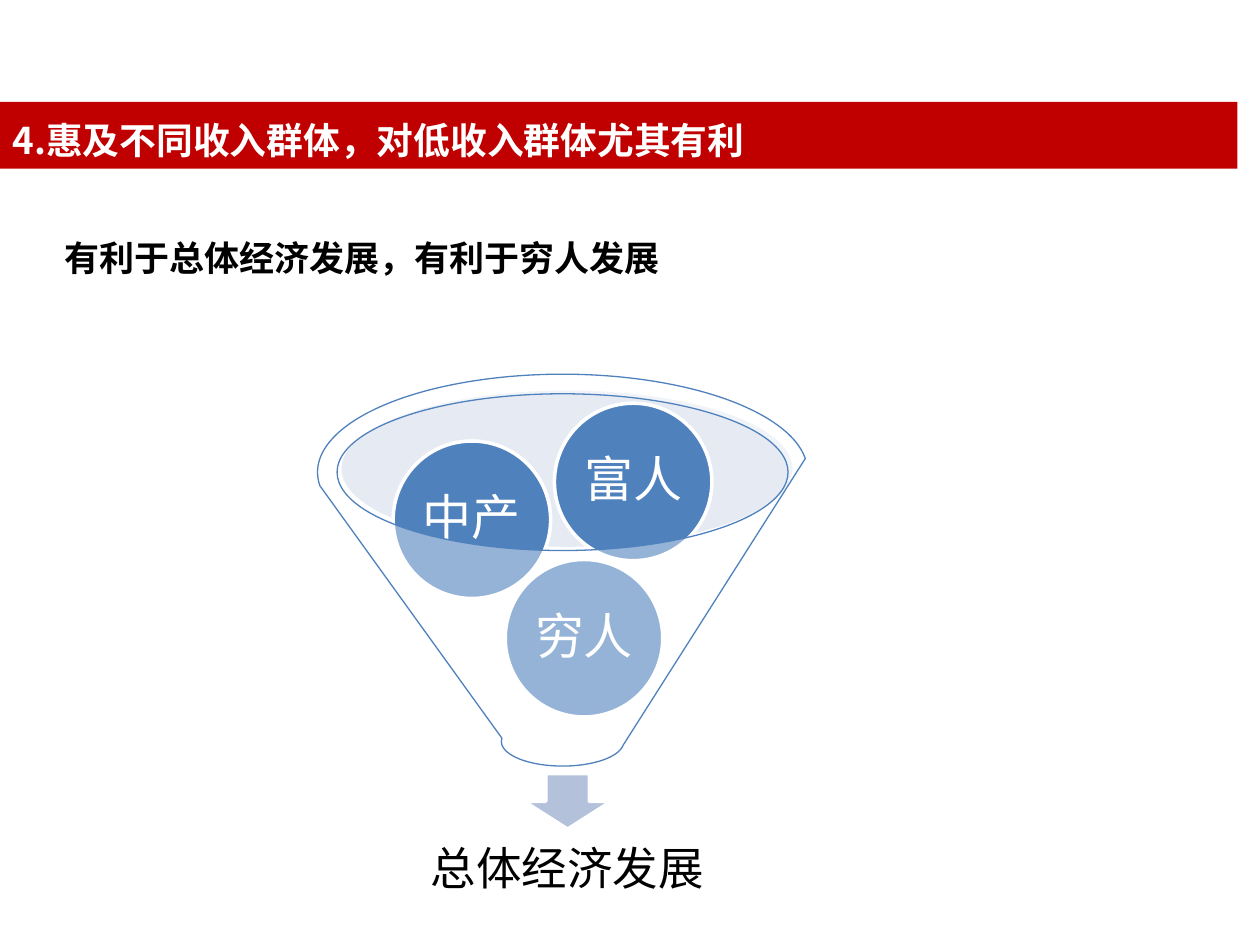
import pptx
import pptx.dml.color
import pptx.enum.shapes
import pptx.enum.text
import pptx.oxml
import pptx.oxml.ns
import pptx.util
from pptx.util import Inches, Pt

RGBColor = pptx.dml.color.RGBColor
SHAPE = pptx.enum.shapes.MSO_SHAPE
ALIGN = pptx.enum.text.PP_ALIGN
ANCHOR = pptx.enum.text.MSO_ANCHOR

RED = RGBColor(0xC0, 0x00, 0x00)
BLUE = RGBColor(0x4F, 0x81, 0xBD)
PALE_BLUE = RGBColor(0xC2, 0xCD, 0xE1)
ARROW_BLUE = RGBColor(0xB3, 0xC1, 0xDB)
WHITE = RGBColor(0xFF, 0xFF, 0xFF)
BLACK = RGBColor(0x00, 0x00, 0x00)
HEADING_FONT = "Noto Sans CJK SC"
LABEL_FONT = "Calibri"

# Content
TITLE = "4.惠及不同收入群体，对低收入群体尤其有利"
STATEMENT = "有利于总体经济发展，有利于穷人发展"
RESULT = "总体经济发展"
GROUPS = [("穷人", 4.01, 4.44), ("中产", 3.12, 3.5), ("富人", 4.4, 3.2)]
CIRCLE_SIZE = 1.25


def add_part(page, kind, area, fill, line=None, width=0, opacity=None):
    part = page.shapes.add_shape(kind, *map(Inches, area))
    part.shadow.inherit = False
    part.fill.solid()
    part.fill.fore_color.rgb = fill
    if opacity is not None:
        color = part.fill._xPr.find(".//" + pptx.oxml.ns.qn("a:srgbClr"))
        alpha = pptx.oxml.parse_xml(
            f'<a:alpha {pptx.oxml.ns.nsdecls("a")} val="{opacity * 1000}"/>')
        color.append(alpha)
    if line is None:
        part.line.fill.background()
    else:
        part.line.color.rgb = line
        part.line.width = Pt(width)
    return part


def write(part, text, size, font, color, bold=False, align=ALIGN.LEFT,
          anchor=ANCHOR.MIDDLE, spacing=0.9, before=0, inset=None):
    frame = part.text_frame
    frame.word_wrap = True
    frame.vertical_anchor = anchor
    if inset is not None:
        frame.margin_left = frame.margin_right = Inches(inset)
        frame.margin_top = frame.margin_bottom = Inches(inset)
    para = frame.paragraphs[0]
    para.alignment = align
    para.line_spacing = spacing
    para.space_before = Pt(before)
    span = para.add_run()
    span.text = text
    span.font.size = Pt(size)
    span.font.name = font
    span.font.bold = bold
    span.font.color.rgb = color
    # East Asian typeface for the Chinese characters
    span.font._element.find(pptx.oxml.ns.qn("a:latin")).addnext(
        pptx.oxml.parse_xml(
            f'<a:ea {pptx.oxml.ns.nsdecls("a")} typeface="{HEADING_FONT}"/>'))


deck = pptx.Presentation()
deck.slide_width, deck.slide_height = Inches(10), Inches(7.5)
page = deck.slides.add_slide(deck.slide_layouts[6])

# Statement and title band
box = page.shapes.add_textbox(*map(Inches, (0.41, 1.76, 8.62, 3.74)))
write(box, STATEMENT, 20, HEADING_FONT, BLACK, bold=True,
      anchor=ANCHOR.TOP, spacing=1.2, before=4)
band = add_part(page, SHAPE.RECTANGLE, (0, 0.81, 9.82, 0.53), RED)
write(band, TITLE, 21, HEADING_FONT, WHITE, bold=True, spacing=1.2)

# Funnel mouth, arrow and result
add_part(page, SHAPE.OVAL, (2.71, 3.1, 3.58, 1.24), PALE_BLUE, opacity=40)
add_part(page, SHAPE.DOWN_ARROW, (4.16, 6.14, 0.69, 0.44), ARROW_BLUE, WHITE, 2)
box = page.shapes.add_textbox(*map(Inches, (2.84, 6.5, 3.33, 0.83)))
write(box, RESULT, 26, LABEL_FONT, BLACK, align=ALIGN.CENTER, inset=0.2)

# Income groups inside the funnel
for name, left, top in GROUPS:
    circle = add_part(page, SHAPE.OVAL, (left, top, CIRCLE_SIZE, CIRCLE_SIZE),
                      BLUE, WHITE, 2)
    write(circle, name, 28, LABEL_FONT, WHITE, align=ALIGN.CENTER, inset=0.04)

# Translucent funnel in front
add_part(page, SHAPE.FUNNEL, (2.52, 2.97, 3.89, 3.11), WHITE, BLUE, 0.75, opacity=40)

deck.save("out.pptx")
